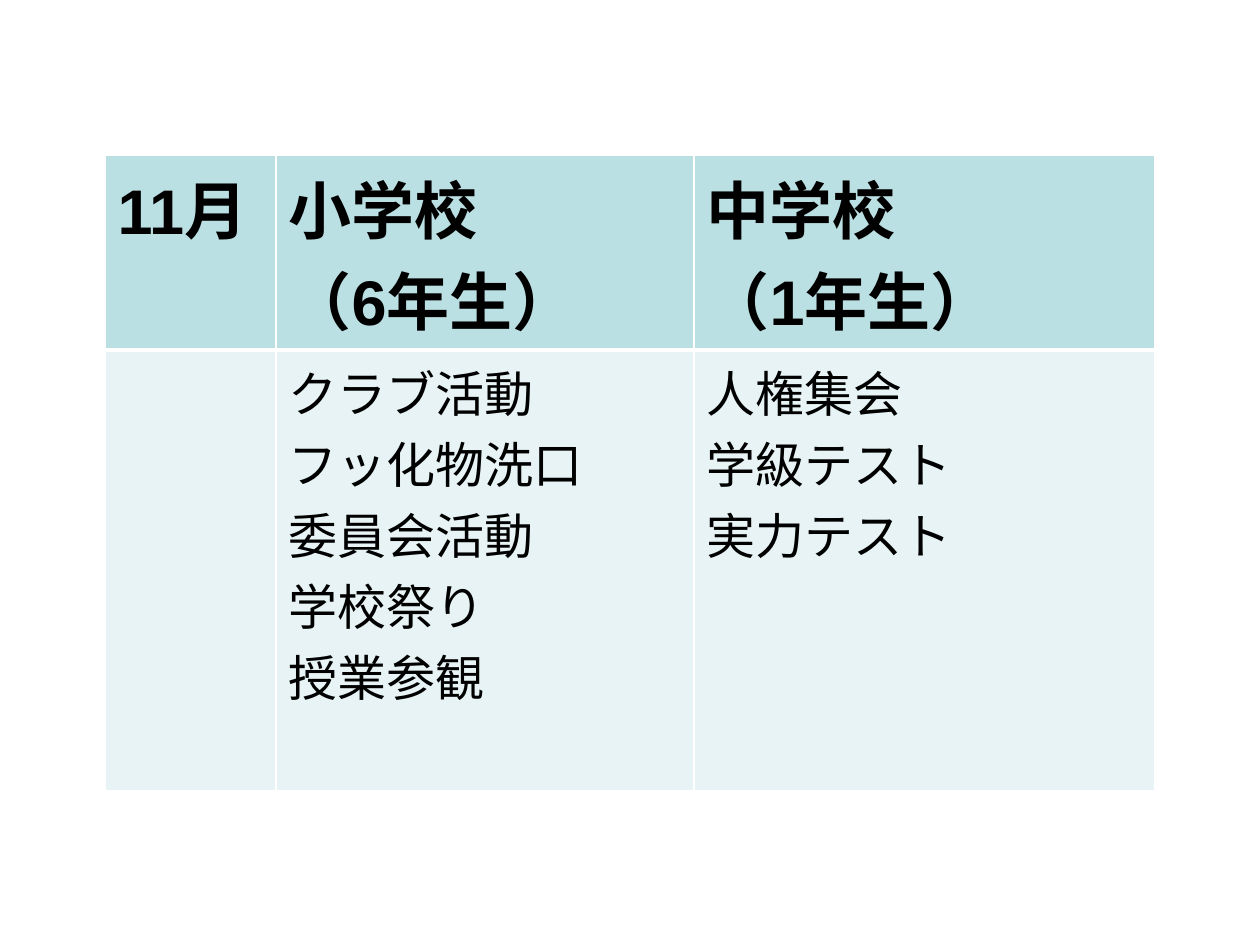
from dataclasses import dataclass

from lxml import etree
from pptx import Presentation
from pptx import util as u
from pptx.dml.color import RGBColor
from pptx.oxml import ns

PX = 914400 / 126
BLACK = RGBColor(0x00, 0x00, 0x00)
WHITE = RGBColor(0xFF, 0xFF, 0xFF)
TEAL = RGBColor(0xBB, 0xE0, 0xE3)
PALE_TEAL = RGBColor(0xE7, 0xF3, 0xF4)
FONT = "Arial"
COLUMN_WIDTHS = (171, 418, 461)


@dataclass(frozen=True)
class Row:
    height: int
    fill: RGBColor
    size: int
    bold: bool
    bottom_border: int
    texts: tuple[str, ...]


ROWS = (
    Row(193, TEAL, 36, True, 3,
        ("11月", "小学校\n（6年生）", "中学校\n（1年生）")),
    Row(441, PALE_TEAL, 28, False, 1,
        ("",
         "クラブ活動\nフッ化物洗口\n委員会活動\n学校祭り\n授業参観",
         "人権集会\n学級テスト\n実力テスト")),
)


def px(length: int) -> u.Emu:
    return u.Emu(round(length * PX))


def set_borders(cell, bottom_points: int) -> None:
    """Draw white cell edges; the border elements must come before the fill."""
    properties = cell._tc.get_or_add_tcPr()
    edges = {"lnL": 1, "lnR": 1, "lnT": 1, "lnB": bottom_points}
    for position, (edge, points) in enumerate(edges.items()):
        line = etree.Element(ns.qn(f"a:{edge}"), w=str(u.Pt(points)))
        fill = etree.SubElement(line, ns.qn("a:solidFill"))
        etree.SubElement(fill, ns.qn("a:srgbClr"), val=str(WHITE))
        properties.insert(position, line)


def fill_cell(cell, content: str, row: Row) -> None:
    cell.fill.solid()
    cell.fill.fore_color.rgb = row.fill
    set_borders(cell, row.bottom_border)
    cell.text_frame.text = content
    for paragraph in cell.text_frame.paragraphs:
        paragraph.font.size = u.Pt(row.size)
        for span in paragraph.runs:
            span.font.name = FONT
            span.font.size = u.Pt(row.size)
            span.font.bold = row.bold
            span.font.color.rgb = BLACK


def add_schedule(page, left: int, top: int) -> None:
    frame = page.shapes.add_table(
        len(ROWS), len(COLUMN_WIDTHS), px(left), px(top),
        px(sum(COLUMN_WIDTHS)), px(sum(row.height for row in ROWS)))
    table = frame.table
    table.horz_banding = False
    for column, width in zip(table.columns, COLUMN_WIDTHS):
        column.width = px(width)
    for table_row, row in zip(table.rows, ROWS):
        table_row.height = px(row.height)
        for cell, content in zip(table_row.cells, row.texts):
            fill_cell(cell, content, row)


def main() -> None:
    deck = Presentation()
    deck.slide_width, deck.slide_height = px(1260), px(945)
    page = deck.slides.add_slide(deck.slide_layouts[6])
    add_schedule(page, 105, 155)
    deck.save("out.pptx")


if __name__ == "__main__":
    main()
